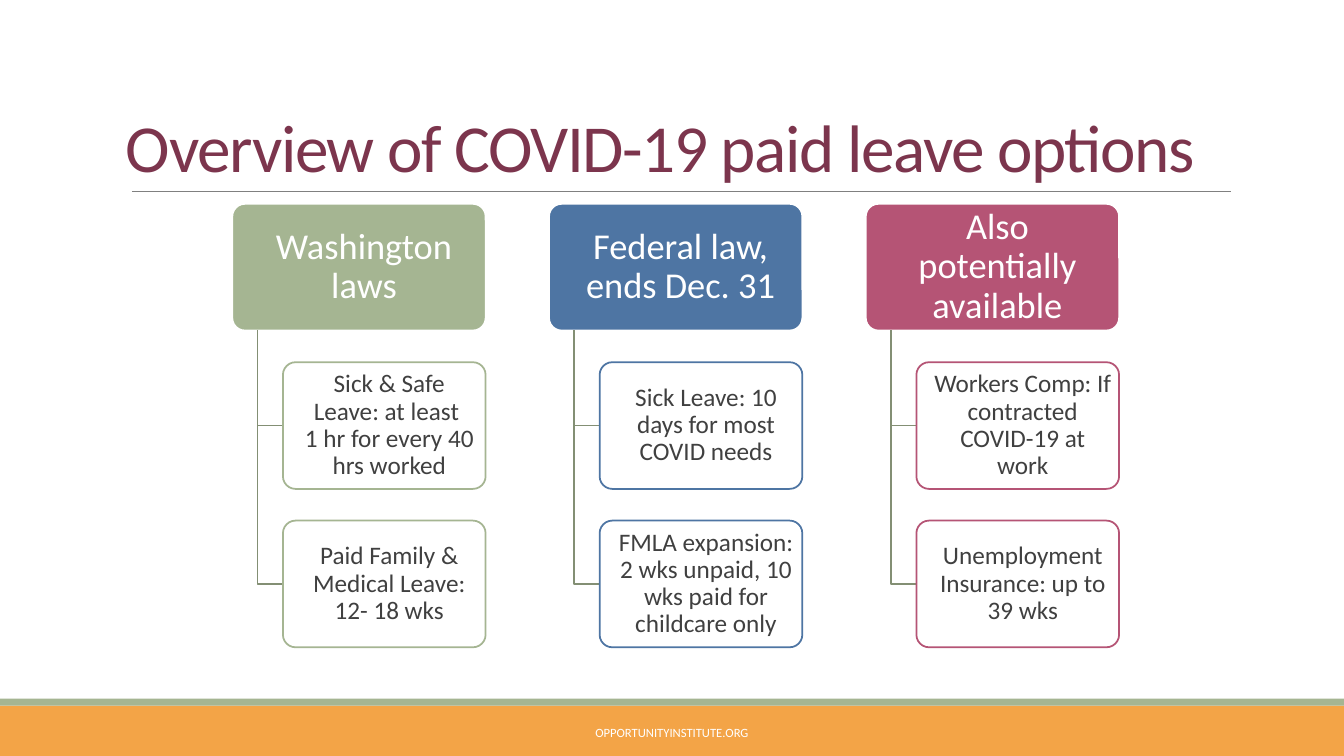
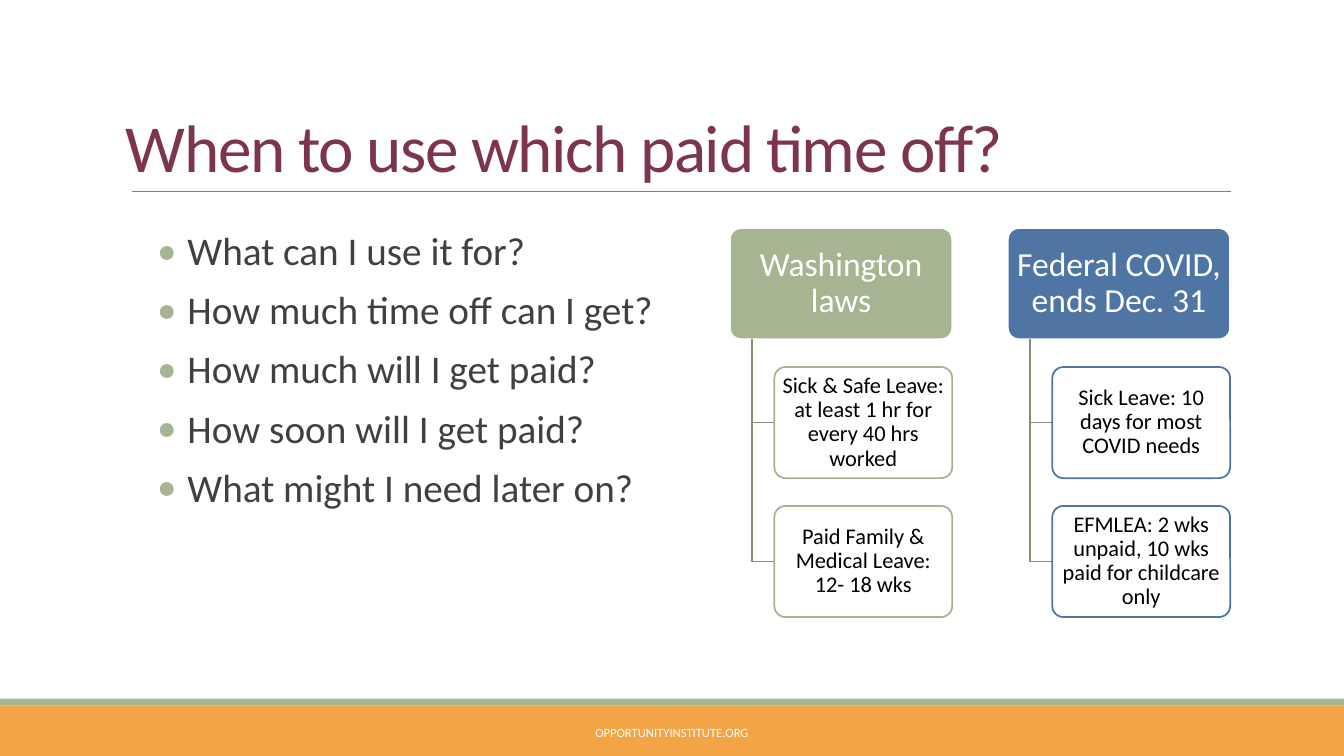
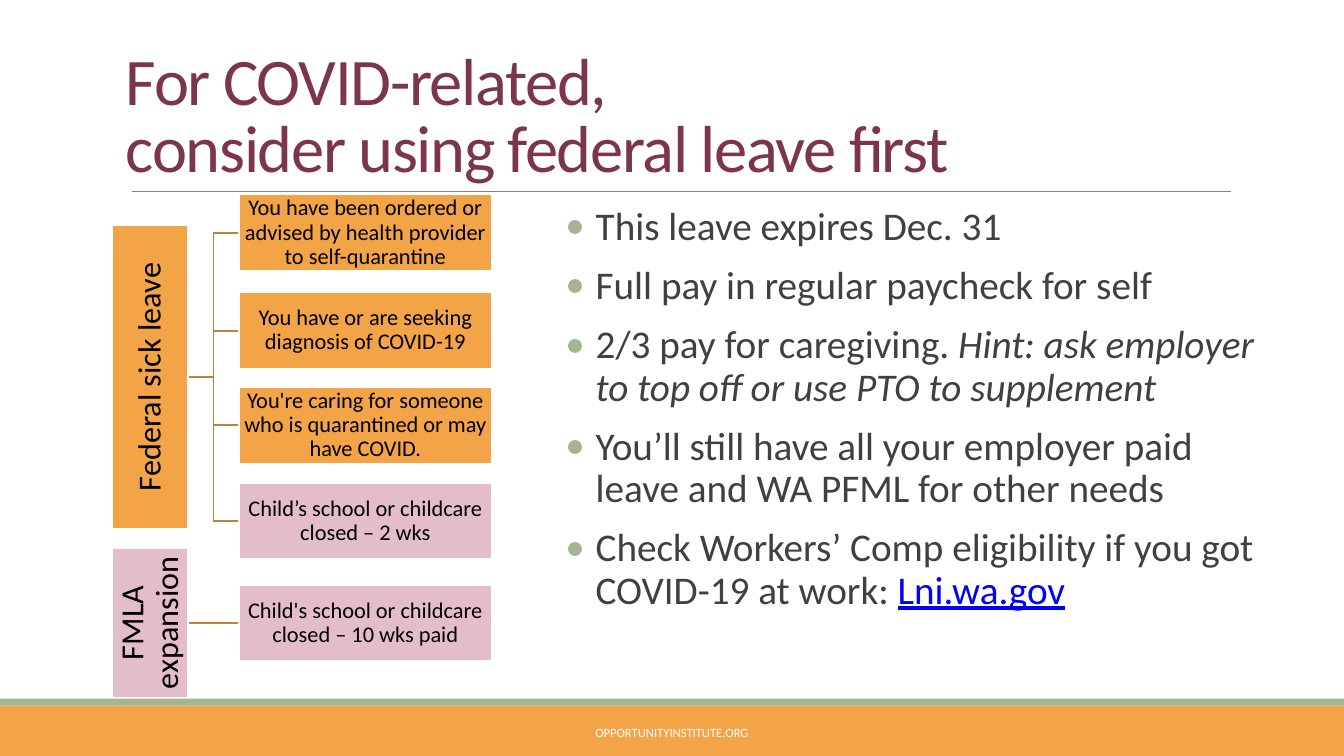
"""Build three slides on paid leave options."""
from dataclasses import dataclass

from lxml import etree
from pptx import Presentation
from pptx.dml import color
from pptx.enum import shapes, text
from pptx.oxml import ns
from pptx.util import Pt


@dataclass(frozen=True)
class Theme:
    font: str = "Calibri"
    white: str = "FFFFFF"
    black: str = "000000"
    body: str = "404040"
    head: str = "7C354D"
    gray: str = "808080"
    green: str = "A5B592"
    blue: str = "4E75A3"
    rose: str = "B55475"
    pink: str = "E3BECA"
    gold: str = "F3A447"
    olive: str = "838F74"
    bronze: str = "C18238"
    link: str = "0000FF"
    title: float = 48
    point: float = 28
    small: float = 9
    stem: float = 23
    leaf: float = 16
    edge: float = 1.25


T = Theme()


def rgb(ink):
    return color.RGBColor.from_string(ink)


class Deck:
    def __init__(self):
        self.prs = Presentation()
        self.prs.slide_width, self.prs.slide_height = Pt(960), Pt(540)

    def start(self, title, size=T.title):
        self.slide = self.prs.slides.add_slide(self.prs.slide_layouts[6])
        self.pool = self.slide.shapes
        self.block(0, 504, 960, 36, T.gold)
        self.block(0, 499, 960, 5, T.green)
        self.route([(94.3, 136.8), (879.1, 136.8)], T.gray, 0.5)
        foot = self.box(293.8, 514, 372.2, 18, 3.6, text.MSO_ANCHOR.MIDDLE)
        self.fill(foot, "OPPORTUNITYINSTITUTE.ORG", T.small, T.white, 1)
        head = self.box(86.4, 22.3, 792, 114.5, 3.6, text.MSO_ANCHOR.BOTTOM)
        self.fill(head, title, size, T.head, 0.85, text.PP_ALIGN.LEFT)
        for run in head.paragraphs[0].runs:
            run.font._element.set("spc", "-100")

    def frame(self, shape, pad, anchor, left=0):
        tf = shape.text_frame
        tf.word_wrap = True
        tf.vertical_anchor = anchor
        tf.margin_left, tf.margin_right = Pt(pad + left), Pt(pad)
        tf.margin_top = tf.margin_bottom = 0
        return tf

    def box(self, x, y, w, h, pad=0, anchor=text.MSO_ANCHOR.TOP):
        shape = self.pool.add_textbox(Pt(x), Pt(y), Pt(w), Pt(h))
        tf = self.frame(shape, pad, anchor)
        tf.margin_top = tf.margin_bottom = Pt(pad)
        return tf

    def style(self, para, size, ink):
        for run in para.runs:
            run.font.name = T.font
            run.font.size = Pt(size)
            run.font.color.rgb = rgb(ink)

    def fill(self, tf, words, size, ink, gap=0.9, align=text.PP_ALIGN.CENTER):
        tf.text = words
        para = tf.paragraphs[0]
        para.alignment = align
        para.line_spacing = gap
        self.style(para, size, ink)

    def block(self, x, y, w, h, fill, line=None, curved=False):
        kind = shapes.MSO_SHAPE.ROUNDED_RECTANGLE if curved else shapes.MSO_SHAPE.RECTANGLE
        shape = self.pool.add_shape(kind, Pt(x), Pt(y), Pt(w), Pt(h))
        shape.shadow.inherit = False
        if curved:
            shape.adjustments[0] = 0.1
        shape.fill.solid()
        shape.fill.fore_color.rgb = rgb(fill)
        if line:
            shape.line.color.rgb = rgb(line)
            shape.line.width = Pt(T.edge)
        else:
            shape.line.fill.background()
        return shape

    def label(self, shape, words, size, ink, pad, left=0):
        tf = self.frame(shape, pad, text.MSO_ANCHOR.MIDDLE, left)
        self.fill(tf, words, size, ink)

    def route(self, spots, ink, width=T.edge):
        spots = [(Pt(x), Pt(y)) for x, y in spots]
        if len(spots) == 2:
            line = self.pool.add_connector(
                shapes.MSO_CONNECTOR.STRAIGHT, *spots[0], *spots[1])
        else:
            form = self.pool.build_freeform(*spots[0], scale=1.0)
            form.add_line_segments(spots[1:], close=False)
            line = form.convert_to_shape()
            line.fill.background()
        line.line.color.rgb = rgb(ink)
        line.line.width = Pt(width)
        etree.SubElement(line.element.spPr, ns.qn("a:effectLst"))

    def bullets(self, x, y, w, h, items):
        tf = self.box(x, y, w, h)
        for i, (words, *tail) in enumerate(items):
            para = tf.add_paragraph() if i else tf.paragraphs[0]
            para.text = words
            para.line_spacing = 0.9
            if i:
                para.space_before = Pt(12)
            props = para._p.get_or_add_pPr()
            props.set("marL", str(Pt(21.6)))
            props.set("indent", str(-Pt(21.6)))
            tint = etree.SubElement(props, ns.qn("a:buClr"))
            etree.SubElement(tint, ns.qn("a:srgbClr")).set("val", T.green)
            etree.SubElement(props, ns.qn("a:buFont")).set("typeface", T.font)
            etree.SubElement(props, ns.qn("a:buChar")).set("char", "•")
            self.style(para, T.point, T.body)
            if tail:
                self.tail(para, *tail)

    def tail(self, para, words, link):
        run = para.add_run()
        run.text = words
        self.style(para, T.point, T.body)
        run.font.italic = not link
        if link:
            run.font.underline = True
            run.font.color.rgb = rgb(T.link)

    def trees(self, x, y, w, sizes, ink, pads, left, cols):
        h = w / 2
        for i, (fill, head, kids) in enumerate(cols):
            at = x + i * 1.25 * w
            top = self.block(at, y, w, h, fill, T.white, True)
            self.label(top, head, sizes[0], T.white, pads[0], left)
            for j, kid in enumerate(kids, 1):
                low = y + j * 1.25 * h
                mid = low + h / 2
                stem, edge = at + 0.1 * w, at + 0.2 * w
                self.route([(stem, y + h), (stem, mid), (edge, mid)], T.olive)
                card = self.block(edge, low, 0.8 * w, h, T.white, fill, True)
                self.label(card, kid, sizes[1], ink, pads[1], left)

    def fan(self, fill, head, mid, span, kids):
        x, w, h = 170.6, 180.7, 54.6
        right, hub = 134.6, 152.6
        for y, tint, words in kids:
            if y == mid:
                spots = [(right, mid), (x, y)]
            else:
                spots = [(right, mid), (hub, mid), (hub, y), (x, y)]
            self.route(spots, T.bronze)
            leaf = self.block(x, y - h / 2, w, h, tint, T.white)
            self.label(leaf, words, T.leaf, T.black, 0.7)
        root = self.block(right - (h + span) / 2, mid - h / 2, span, h, fill, T.white)
        root.rotation = 270
        self.label(root, head, T.stem, T.black, 1.4)


def main():
    deck = Deck()

    deck.start("Overview of COVID-19 paid leave options")
    deck.trees(165.9, 145.6, 181, (26, 18), T.body, (4.2, 2.4), 7.2, [
        (T.green, "Washington laws", [
            "Sick & Safe Leave: at least \v1 hr for every 40 hrs worked",
            "Paid Family & Medical Leave: 12- 18 wks"]),
        (T.blue, "Federal law, ends Dec. 31", [
            "Sick Leave: 10 days for most COVID needs",
            "FMLA expansion: 2 wks unpaid, 10 wks paid for childcare only"]),
        (T.rose, "Also potentially available", [
            "Workers Comp: If contracted COVID-19 at work",
            "Unemployment Insurance: up to 39 wks"]),
    ])

    deck.start("When to use which paid time off?")
    deck.bullets(112.3, 165.6, 400, 296.6, [
        ("What can I use it for?",),
        ("How much time off can I get?",),
        ("How much will I get paid?",),
        ("How soon will I get paid?",),
        ("What might I need later on?",),
    ])
    deck.trees(521.4, 162.9, 158.8, (24, 16), T.black, (3.4, 2), 0, [
        (T.green, "Washington laws", [
            "Sick & Safe Leave: at least 1 hr for every 40 hrs worked",
            "Paid Family & Medical Leave: 12- 18 wks"]),
        (T.blue, "Federal COVID, ends Dec. 31", [
            "Sick Leave: 10 days for most COVID needs",
            "EFMLEA: 2 wks unpaid, 10 wks paid for childcare only"]),
    ])

    deck.start("For COVID-related, \vconsider using federal leave first", 47.5)
    deck.bullets(403.9, 147.6, 497.5, 348.5, [
        ("This leave expires Dec. 31",),
        ("Full pay in regular paycheck for self",),
        ("2/3 pay for caregiving. ",
         "Hint: ask employer to top off or use PTO to supplement", False),
        ("You’ll still have all your employer paid leave and WA PFML for other needs",),
        ("Check Workers’ Comp eligibility if you got COVID-19 at work: ",
         "Lni.wa.gov", True),
    ])
    deck.fan(T.gold, "Federal sick leave", 269.3, 216.7, [
        (166.3, T.gold,
         "You have been ordered or advised by health provider to self-quarantine"),
        (236.2, T.gold, "You have or are seeking diagnosis of COVID-19"),
        (303.8, T.gold,
         "You're caring for someone who is quarantined or may have COVID."),
        (372.2, T.pink, "Child’s school or childcare closed – 2 wks"),
    ])
    deck.fan(T.pink, "FMLA expansion", 445, 106.6, [
        (445, T.pink, "Child's school or childcare closed – 10 wks paid"),
    ])

    deck.prs.save("out.pptx")


if __name__ == "__main__":
    main()
